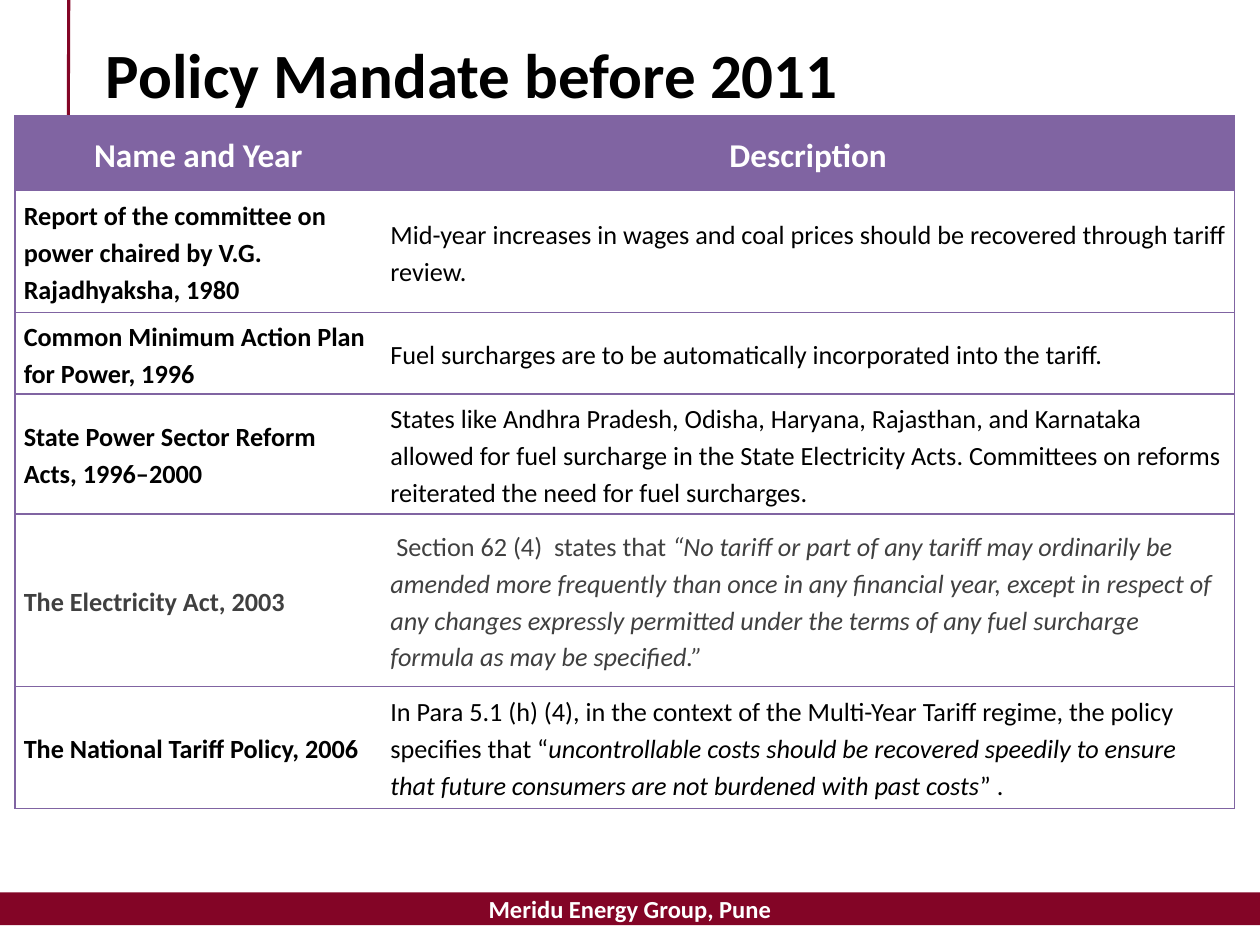
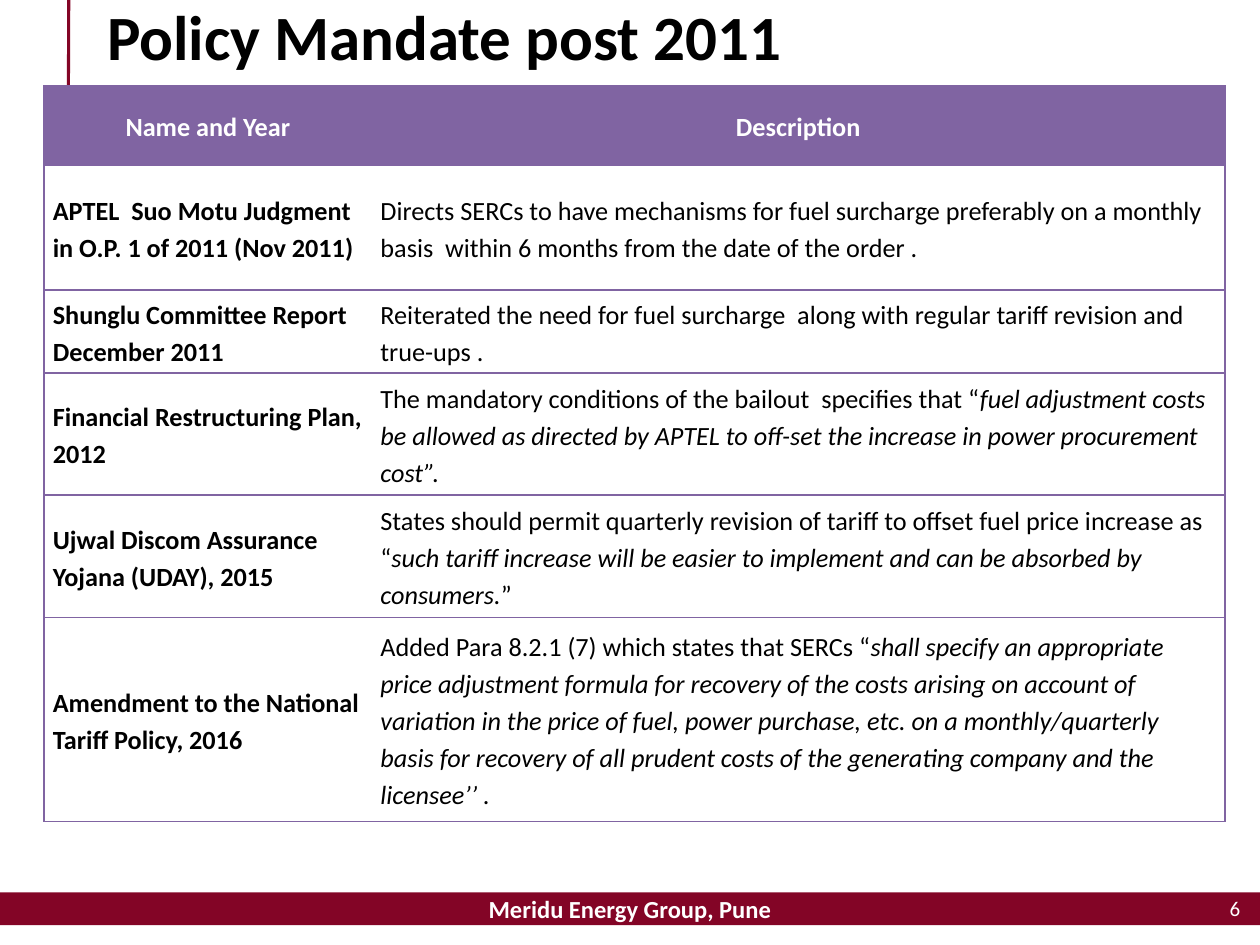
from lxml import etree
from pptx import Presentation
from pptx.dml.color import RGBColor
from pptx.enum.shapes import MSO_CONNECTOR, MSO_SHAPE
from pptx.enum.text import MSO_ANCHOR as ANCHOR, MSO_AUTO_SIZE as AUTO_SIZE, PP_ALIGN as ALIGN
from pptx.oxml.ns import qn
from pptx.util import Pt

COLORS = {"maroon": "830526", "purple": "8064A2", "white": "FFFFFF",
          "black": "000000", "gray": "404040"}
FONT = "Calibri"
FOOTER = "Meridu Energy Group, Pune"
HEADINGS = ("Name and Year", "Description")

# Each row: height, name, description pieces (plain and italic in turn), text colour
mandates = [
    {
        "title": "Policy Mandate before 2011", "title_at": (53.3, 21.6),
        "table_at": (8.6, 66.2), "columns": (209.5, 487.5),
        "heading_height": 42.5, "heading_size": 19, "body_fill": "white", "number": None,
        "rows": [
            (69.8, "Report of the committee on power chaired by V.G. Rajadhyaksha, 1980",
             ["Mid-year increases in wages and coal prices should be recovered through "
              "tariff review."], "black"),
            (46.8, "Common Minimum Action Plan for Power, 1996",
             ["Fuel surcharges are to be automatically incorporated into the tariff."], "black"),
            (68.4, "State Power Sector Reform Acts, 1996–2000",
             ["States like Andhra Pradesh, Odisha, Haryana, Rajasthan, and Karnataka allowed "
              "for fuel surcharge in the State Electricity Acts. Committees on reforms "
              "reiterated the need for fuel surcharges."], "black"),
            (98.6, "The Electricity Act, 2003",
             [" Section 62 (4)  states that ",
              "“No tariff or part of any tariff may ordinarily be amended more frequently than "
              "once in any financial year, except in respect of any changes expressly permitted "
              "under the terms of any fuel surcharge formula as may be specified.”"], "gray"),
            (69.8, "The National Tariff Policy, 2006",
             ["In Para 5.1 (h) (4), in the context of the Multi-Year Tariff regime, the policy "
              "specifies that “",
              "uncontrollable costs should be recovered speedily to ensure that future "
              "consumers are not burdened with past costs",
              "” ."], "black"),
        ],
    },
    {
        "title": "Policy Mandate post 2011", "title_at": (54, 0),
        "table_at": (25.2, 49), "columns": (187.2, 487.5),
        "heading_height": 45.4, "heading_size": 15, "body_fill": None, "number": "6",
        "rows": [
            (71.3, "APTEL  Suo Motu Judgment in O.P. 1 of 2011 (Nov 2011)",
             ["Directs SERCs to have mechanisms for fuel surcharge preferably on a monthly "
              "basis  within 6 months from the date of the order ."], "black"),
            (47.5, "Shunglu Committee Report December 2011",
             ["Reiterated the need for fuel surcharge  along with regular tariff revision and "
              "true-ups ."], "black"),
            (69.8, "Financial Restructuring Plan, 2012",
             ["The mandatory conditions of the bailout  specifies that “",
              "fuel adjustment costs be allowed as directed by APTEL to off-set the increase "
              "in power procurement cost”."], "black"),
            (69.8, "Ujwal Discom Assurance Yojana (UDAY), 2015",
             ["States should permit quarterly revision of tariff to offset fuel price "
              "increase as “",
              "such tariff increase will be easier to implement and can be absorbed by "
              "consumers.",
              "”"], "black"),
            (116.6, "Amendment to the National Tariff Policy, 2016",
             ["Added Para 8.2.1 (7) which states that SERCs “",
              "shall specify an appropriate price adjustment formula for recovery of the costs "
              "arising on account of variation in the price of fuel, power purchase, etc. on a "
              "monthly/quarterly basis for recovery of all prudent costs of the generating "
              "company and the licensee’’ ."], "black"),
        ],
    },
]


def write(frame, pieces, size, color, bold=False, align=ALIGN.LEFT, spacing=None):
    """Fill the first paragraph; every second piece is italic."""
    frame.vertical_anchor = ANCHOR.MIDDLE
    paragraph = frame.paragraphs[0]
    paragraph.alignment = align
    paragraph.line_spacing = spacing
    for index, piece in enumerate(pieces):
        run = paragraph.add_run()
        run.text = piece
        run.font.name, run.font.size = FONT, Pt(size)
        run.font.bold, run.font.italic = bold, index % 2 == 1
        run.font.color.rgb = RGBColor.from_string(COLORS[color])


def style_cell(cell, fill, outer_side):
    """Rule the cell above, below and on its outer side, then set its fill."""
    properties = cell._tc.get_or_add_tcPr()
    for side in ("lnL", "lnR", "lnT", "lnB"):
        border = etree.SubElement(properties, qn(f"a:{side}"), w=str(Pt(1)))
        if side in (outer_side, "lnT", "lnB"):
            solid = etree.SubElement(border, qn("a:solidFill"))
            etree.SubElement(solid, qn("a:srgbClr"), val=COLORS["purple"])
        else:
            etree.SubElement(border, qn("a:noFill"))
    if fill:
        cell.fill.solid()
        cell.fill.fore_color.rgb = RGBColor.from_string(COLORS[fill])
    else:
        cell.fill.background()
    cell.margin_left = cell.margin_right = Pt(5)
    cell.margin_top = cell.margin_bottom = Pt(0)
    cell.vertical_anchor = ANCHOR.MIDDLE


deck = Presentation()
deck.slide_width, deck.slide_height = Pt(720), Pt(540)

for mandate in mandates:
    slide = deck.slides.add_slide(deck.slide_layouts[5])

    # Footer band
    band = slide.shapes.add_shape(MSO_SHAPE.RECTANGLE, Pt(0), Pt(510), Pt(720), Pt(18.7))
    band.shadow.inherit = False
    band.fill.solid()
    band.fill.fore_color.rgb = RGBColor.from_string(COLORS["maroon"])
    band.line.fill.background()
    band.text_frame.word_wrap = False
    write(band.text_frame, [FOOTER], 14, "white", bold=True, align=ALIGN.CENTER)

    # Rule beside the title
    rule = slide.shapes.add_connector(MSO_CONNECTOR.STRAIGHT, Pt(39.3), Pt(0), Pt(39), Pt(78.5))
    rule.line.color.rgb = RGBColor.from_string(COLORS["maroon"])
    rule.line.width = Pt(1.75)
    etree.SubElement(rule._element.spPr, qn("a:effectLst"))

    # Title
    title = slide.shapes.title
    title.left, title.top = [Pt(place) for place in mandate["title_at"]]
    title.width, title.height = Pt(605.5), Pt(40.3)
    title.text_frame.auto_size = AUTO_SIZE.NONE
    title.text_frame.word_wrap = True
    write(title.text_frame, [mandate["title"]], 36, "black", bold=True)

    # Table of mandates
    heights = [mandate["heading_height"]] + [row[0] for row in mandate["rows"]]
    left, top = mandate["table_at"]
    table = slide.shapes.add_table(len(heights), 2, Pt(left), Pt(top),
                                   Pt(sum(mandate["columns"])), Pt(sum(heights))).table
    table.horz_banding = False
    for column, width in zip(table.columns, mandate["columns"]):
        column.width = Pt(width)
    for row, height in zip(table.rows, heights):
        row.height = Pt(height)
        fill = "purple" if row is table.rows[0] else mandate["body_fill"]
    for index in range(len(heights)):
        fill = mandate["body_fill"] if index else "purple"
        for column, outer_side in enumerate(("lnL", "lnR")):
            style_cell(table.cell(index, column), fill, outer_side)
    for column, heading in enumerate(HEADINGS):
        write(table.cell(0, column).text_frame, [heading], mandate["heading_size"], "white",
              bold=True, align=ALIGN.CENTER, spacing=1.15)
    for index, (_, name, description, color) in enumerate(mandate["rows"], start=1):
        write(table.cell(index, 0).text_frame, [name], 15, color, bold=True, spacing=1.15)
        write(table.cell(index, 1).text_frame, description, 15, color, spacing=1.15)

    # Slide number
    if mandate["number"]:
        number = slide.shapes.add_textbox(Pt(548), Pt(504.7), Pt(167.8), Pt(28.8))
        number.text_frame.word_wrap = True
        write(number.text_frame, [mandate["number"]], 12, "white", align=ALIGN.RIGHT)

deck.save("out.pptx")
